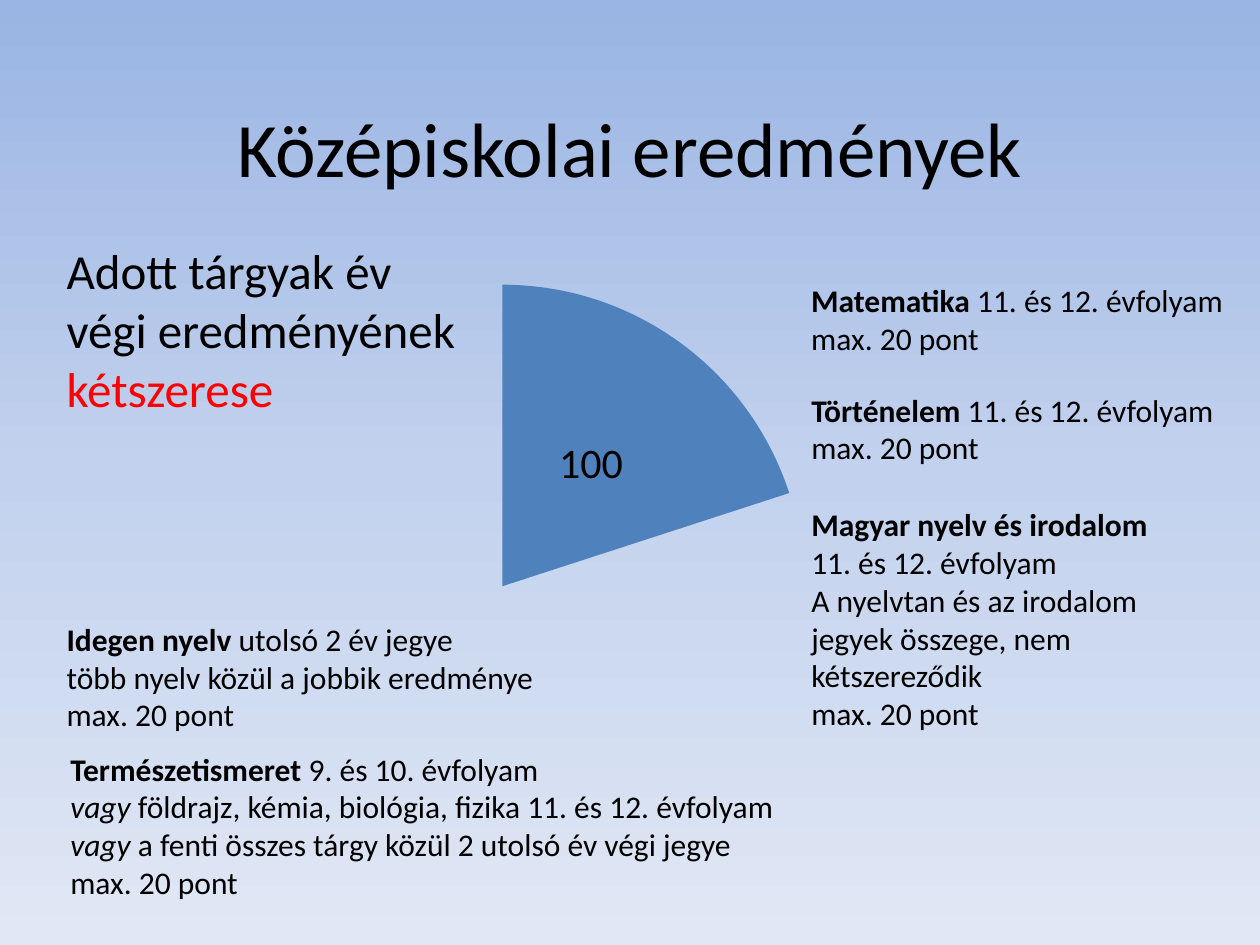
from copy import deepcopy
from lxml import etree
from pptx import Presentation
from pptx.chart.data import CategoryChartData
from pptx.dml.color import RGBColor
from pptx.enum.chart import XL_CHART_TYPE, XL_LABEL_POSITION
from pptx.enum.text import MSO_ANCHOR, MSO_AUTO_SIZE, PP_ALIGN
from pptx.oxml.ns import qn
from pptx.util import Inches, Pt

FONT = "Calibri"
INK, RED, BLUE = "000000", "FF0000", "4F81BD"
POINTS = "max. 20 pont"
YEARS = "11. és 12. évfolyam"

# Subject notes: box, wrap, and lines of (text, style) runs
NOTES = [
    ((6.34, 2.18, 3.5, 0.71), False,
     [[("Matematika", "b"), (f" {YEARS}", "")], [(POINTS, "")]]),
    ((6.34, 3.05, 3.41, 0.71), False,
     [[("Történelem", "b"), (f" {YEARS}", "")], [(POINTS, "")]]),
    ((6.34, 3.96, 3.39, 1.92), True,
     [[("Magyar nyelv és irodalom", "b")], [(YEARS, "")],
      [("A nyelvtan és az irodalom jegyek összege, nem kétszereződik", "")],
      [(POINTS, "")]]),
    ((0.43, 4.87, 3.95, 1.01), False,
     [[("Idegen nyelv", "b"), (" utolsó 2 év jegye", "")],
      [("több nyelv közül a jobbik eredménye", "")], [(POINTS, "")]]),
    ((0.46, 5.9, 5.84, 1.31), False,
     [[("Természetismeret ", "b"), ("9. és 10. évfolyam", "")],
      [("vagy", "i"), (f" földrajz, kémia, biológia, fizika {YEARS}", "")],
      [("vagy", "i"), (" a fenti összes tárgy közül 2 utolsó év végi jegye", "")],
      [(POINTS, "")]]),
]


def color(code):
    return RGBColor.from_string(code)


def place(box):
    return [Inches(v) for v in box]


def style(font, size):
    font.name, font.size = FONT, Pt(size)
    font.color.rgb = color(INK)


def add_back(slide, codes):
    fill = slide.background.fill
    fill.gradient()
    fill.gradient_angle = 270
    # Add the middle stop
    first = slide.element.find(".//" + qn("a:gs"))
    first.addnext(deepcopy(first))
    for i, (stop, code) in enumerate(zip(fill.gradient_stops, codes)):
        stop.position = i / (len(codes) - 1)
        stop.color.rgb = color(code)


def add_title(slide, box, text):
    title = slide.shapes.title
    title.left, title.top, title.width, title.height = place(box)
    frame = title.text_frame
    frame.text = text
    frame.vertical_anchor = MSO_ANCHOR.MIDDLE
    para = frame.paragraphs[0]
    para.alignment = PP_ALIGN.CENTER
    style(para.font, 44)


def add_pie(slide, box, area):
    data = CategoryChartData()
    data.categories = ["1", "2", "3", "4"]
    data.add_series("Series 1", (100, 100, 200, 100))
    chart = slide.shapes.add_chart(XL_CHART_TYPE.PIE, *place(box), data).chart
    chart.has_title = chart.has_legend = False
    style(chart.font, 10)
    plot = chart.plots[0]
    plot.vary_by_categories = True
    series = plot.series[0]
    series.data_labels.show_value = False

    # Only the first slice is filled and labelled
    for i in range(4):
        form = series.points[i].format
        form.line.fill.background()
        if i:
            form.fill.background()
        else:
            form.fill.solid()
            form.fill.fore_color.rgb = color(BLUE)
    label = series.points[0].data_label
    style(label.font, 24)
    label.position = XL_LABEL_POSITION.CENTER

    # Fixed inner plot area
    root = chart.element.find(".//" + qn("c:plotArea"))
    for old in root.findall(qn("c:layout")):
        root.remove(old)
    layout = etree.Element(qn("c:layout"))
    root.insert(0, layout)
    manual = etree.SubElement(layout, qn("c:manualLayout"))
    tags = ("layoutTarget", "xMode", "yMode", "x", "y", "w", "h")
    for tag, val in zip(tags, ("inner", "edge", "edge", *area)):
        etree.SubElement(manual, qn(f"c:{tag}")).set("val", str(val))


def add_note(slide, box, lines, size=18, wrap=True):
    frame = slide.shapes.add_textbox(*place(box)).text_frame
    frame.word_wrap = wrap
    frame.auto_size = MSO_AUTO_SIZE.SHAPE_TO_FIT_TEXT
    for i, line in enumerate(lines):
        para = frame.add_paragraph() if i else frame.paragraphs[0]
        style(para.font, size)
        for text, mark in line:
            run = para.add_run()
            run.text = text
            if mark == "b":
                run.font.bold = True
            elif mark == "i":
                run.font.italic = True
            elif mark:
                run.font.color.rgb = color(mark)


def main():
    deck = Presentation()
    deck.slide_width, deck.slide_height = Inches(10), Inches(7.5)
    slide = deck.slides.add_slide(deck.slide_layouts[0])
    sub = slide.placeholders[1].element
    sub.getparent().remove(sub)

    add_back(slide, ("9AB5E4", "C2D1ED", "E1E8F5"))
    add_title(slide, (0.75, 0.36, 8.5, 1.61), "Középiskolai eredmények")
    add_pie(slide, (1.22, 1.94, 7.48, 5.12), (0.05, 0.06, 0.64, 0.94))
    # Lead text
    add_note(slide, (0.43, 1.86, 3.39, 1.51),
             [[("Adott tárgyak év végi eredményének ", ""), ("kétszerese", RED)]], 28)
    for box, wrap, lines in NOTES:
        add_note(slide, box, lines, wrap=wrap)
    deck.save("out.pptx")


if __name__ == "__main__":
    main()
